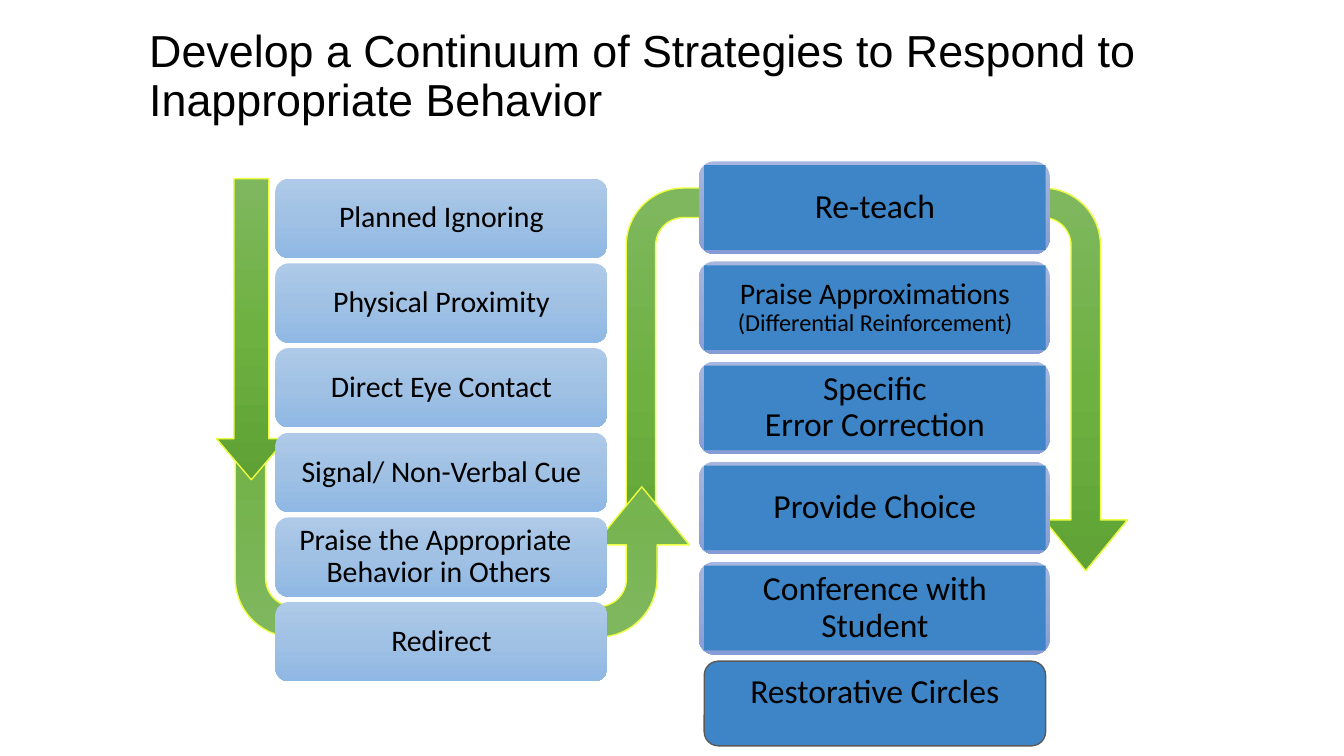
from copy import deepcopy

from pptx import Presentation
from pptx import util as u
from pptx.dml import color
from pptx.enum import shapes, text

COLORS = {
    "text": "000000",
    "step": "3D85C6",
    "arrow_edge": "EEFF41",
    "last_edge": "595959",
}
GRADIENTS = {
    "arrow": ("7FB75F", "6EB141", "5FA134"),
    "frame": ("A6B6DE", "97AAD8", "859CD6"),
    "strategy": ("AFCAE9", "A0C1E4", "8FB8E4"),
}
STRATEGIES = [
    "Planned Ignoring",
    "Physical Proximity",
    "Direct Eye Contact",
    "Signal/ Non-Verbal Cue",
    "Praise the Appropriate \nBehavior in Others",
    "Redirect",
]
STEPS = [
    [("Re-teach", 18)],
    [("Praise Approximations ", 16), ("(Differential Reinforcement)", 13)],
    [("Specific\nError Correction", 18)],
    [("Provide Choice", 18)],
    [("Conference with Student", 18)],
]
STEP_PITCH = (4.18 - 1.2) / (len(STEPS) - 1)


def rgb(value):
    return color.RGBColor.from_string(value)


def place(box):
    return [u.Inches(length) for length in box]


def fill_gradient(shape, name):
    shape.fill.gradient()
    shape.fill.gradient_angle = 270
    first = shape._element.spPr.xpath(".//a:gs")[0]
    first.addnext(deepcopy(first))
    for index, stop in enumerate(shape.fill.gradient_stops):
        stop.position = index / 2
        stop.color.rgb = rgb(GRADIENTS[name][index])


def add_block(parent, kind, box, fill, edge=None, percents=()):
    block = parent.shapes.add_shape(kind, *place(box))
    block.shadow.inherit = False
    for index, percent in enumerate(percents):
        block.adjustments[index] = percent / 100
    if fill in GRADIENTS:
        fill_gradient(block, fill)
    else:
        block.fill.solid()
        block.fill.fore_color.rgb = rgb(COLORS[fill])
    if edge:
        block.line.color.rgb = rgb(COLORS[edge])
        block.line.width = u.Pt(0.75)
    else:
        block.line.fill.background()
    return block


def write(frame, runs, font, align, inset_x, inset_y):
    frame.word_wrap = True
    frame.auto_size = text.MSO_AUTO_SIZE.NONE
    frame.vertical_anchor = text.MSO_ANCHOR.MIDDLE
    frame.margin_left = frame.margin_right = u.Inches(inset_x)
    frame.margin_top = frame.margin_bottom = u.Inches(inset_y)
    paragraph = frame.paragraphs[0]
    paragraph.alignment = align
    paragraph.line_spacing = 0.9
    for words, size in runs:
        for index, line in enumerate(words.split("\n")):
            if index:
                paragraph.add_line_break()
            run = paragraph.add_run()
            run.text = line
            run.font.name = font
            run.font.size = u.Pt(size)
            run.font.color.rgb = rgb(COLORS["text"])


def write_label(shape, runs, inset):
    write(shape.text_frame, runs, "Calibri", text.PP_ALIGN.CENTER, inset, inset)


def add_title(slide):
    title = slide.shapes.title
    title.left, title.top, title.width, title.height = place((1.04, 0.24, 8.21, 0.67))
    heading = "Develop a Continuum of Strategies to Respond to Inappropriate Behavior"
    write(title.text_frame, [(heading, 24)], "Arial", text.PP_ALIGN.LEFT, 0.07, 0.04)


def add_arrows(slide):
    uturn = shapes.MSO_SHAPE.U_TURN_ARROW
    down = shapes.MSO_SHAPE.DOWN_ARROW
    add_block(slide, uturn, (4.66, 1.4, 3.73, 2.96), "arrow", "arrow_edge",
              (7.4, 10.5, 12.8, 14.4, 96.2))
    rising = add_block(slide, uturn, (1.75, 1.33, 3.38, 3.41), "arrow", "arrow_edge",
                       (6.7, 10.5, 12.8, 12.9, 32.8))
    rising.rotation = 180
    rising._element.spPr.xfrm.set("flipH", "1")
    add_block(slide, down, (1.61, 1.33, 0.52, 2.24), "arrow", "arrow_edge", (50, 58.8))


def add_steps(slide):
    for index, runs in enumerate(STEPS):
        top = 1.2 + STEP_PITCH * index
        add_block(slide, shapes.MSO_SHAPE.ROUNDED_RECTANGLE, (5.2, top, 2.61, 0.69), "frame")
        step = add_block(slide, shapes.MSO_SHAPE.RECTANGLE, (5.24, top + 0.03, 2.54, 0.63), "step")
        write_label(step, runs, 0.07 if len(runs) == 1 else 0.06)


def add_strategies(slide):
    column = slide.shapes.add_group_shape()
    for index, words in enumerate(STRATEGIES):
        top = 1.33 + 0.63 * index
        add_block(column, shapes.MSO_SHAPE.ROUNDED_RECTANGLE, (2.05, top, 2.47, 0.59), "strategy")
        left, width = (2.03, 2.47) if "\n" in words else (2.08, 2.41)
        label = column.shapes.add_textbox(*place((left, top + 0.03, width, 0.53)))
        write_label(label, [(words, 16)], 0.06)


def add_last_step(slide):
    add_block(slide, shapes.MSO_SHAPE.ROUNDED_RECTANGLE, (5.24, 4.92, 2.54, 0.63),
              "step", "last_edge")
    label = slide.shapes.add_textbox(*place((5.24, 4.84, 2.54, 0.63)))
    write_label(label, [("Restorative Circles", 18)], 0.07)


def main():
    deck = Presentation()
    deck.slide_width, deck.slide_height = place((10, 10 * 9 / 16))
    slide = deck.slides.add_slide(deck.slide_layouts[5])
    add_title(slide)
    add_arrows(slide)
    add_steps(slide)
    add_strategies(slide)
    add_last_step(slide)
    deck.save("out.pptx")


if __name__ == "__main__":
    main()
